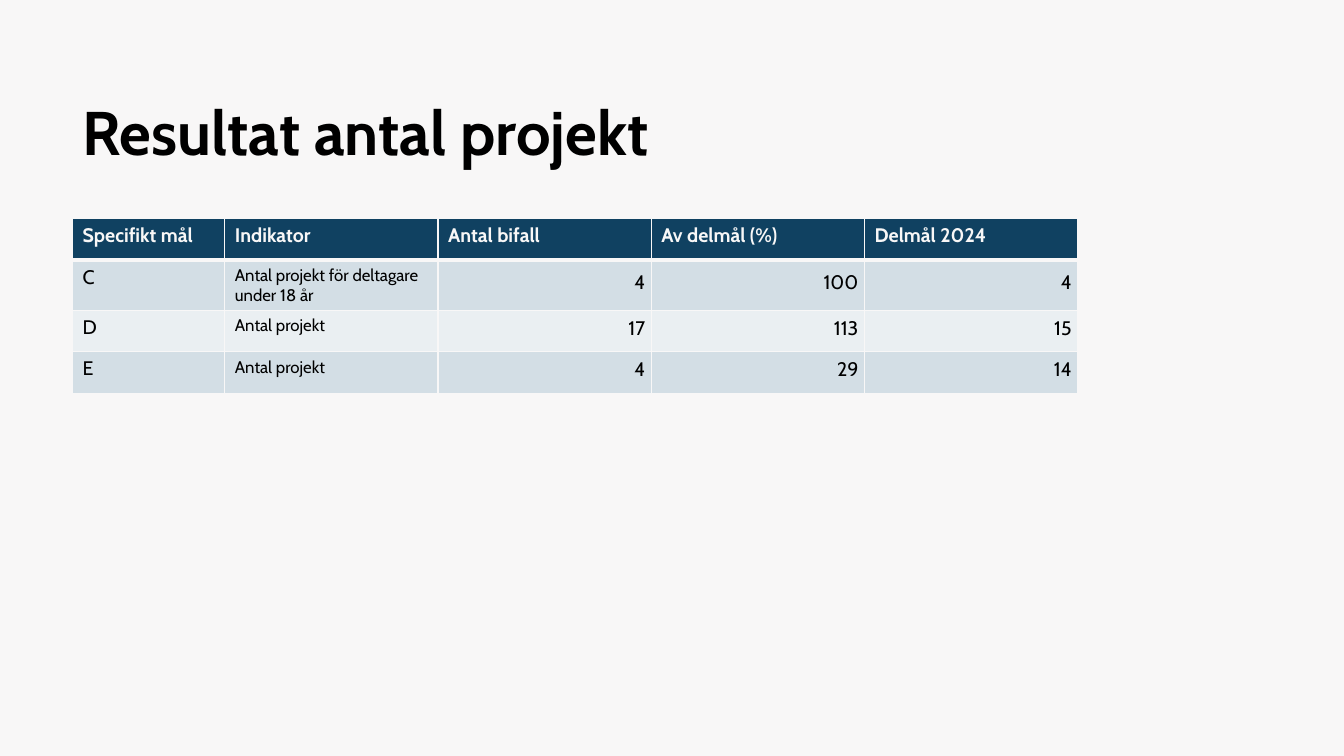
"""Build a slide with a table of project results per specific objective."""
from dataclasses import dataclass

from lxml.etree import SubElement
from pptx import Presentation
from pptx.dml.color import RGBColor as RGB
from pptx.enum.text import MSO_ANCHOR as ANCHOR, PP_ALIGN as ALIGN
from pptx.oxml.ns import qn
from pptx.util import Inches, Pt

TITLE = "Resultat antal projekt"
HEADER = ["Specifikt mål", "Indikator", "Antal bifall", "Av delmål (%)", "Delmål 2024"]
RESULTS = [
    ("C", "Antal projekt för deltagare under 18 år", 4, 100, 4),
    ("D", "Antal projekt", 17, 113, 15),
    ("E", "Antal projekt", 4, 29, 14),
]
LEFT, WIDTH = 0.72, 9.97
TITLE_TOP, TITLE_HEIGHT = 0.62, 1.45
TABLE_TOP, ROW_HEIGHT = 2.17, 0.41
FIRST_COL = 1.51
OTHER_COL = (WIDTH - FIRST_COL) / (len(HEADER) - 1)


@dataclass(frozen=True)
class Theme:
    font: str = "Cabin"
    paper: str = "F8F7F7"
    ink: str = "000000"
    header: str = "104161"
    bands: tuple = ("D3DEE5", "EAEFF2")
    title_size: int = 44
    body_size: int = 14
    small_size: int = 12
    thin: int = 1
    thick: int = 3


THEME = Theme()


def style(p, size, color, bold=False):
    for r in p.runs:
        r.font.name, r.font.size, r.font.bold = THEME.font, Pt(size), bold
        r.font.color.rgb = RGB.from_string(color)


def add_borders(cell, top, bottom):
    tc_pr = cell._tc.get_or_add_tcPr()
    widths = {"lnL": THEME.thin, "lnR": THEME.thin, "lnT": top, "lnB": bottom}
    for side, width in widths.items():
        line = SubElement(tc_pr, qn(f"a:{side}"), w=str(Pt(width)))
        fill = SubElement(line, qn("a:solidFill"))
        SubElement(fill, qn("a:srgbClr"), val=THEME.paper)


def fill_cell(cell, row, col, value):
    add_borders(cell, THEME.thick if row == 1 else THEME.thin,
                THEME.thick if row == 0 else THEME.thin)
    cell.fill.solid()
    band = THEME.bands[(row - 1) % len(THEME.bands)]
    cell.fill.fore_color.rgb = RGB.from_string(band if row else THEME.header)
    cell.text_frame.text = str(value)
    p = cell.text_frame.paragraphs[0]
    if row == 0:
        style(p, THEME.body_size, THEME.paper, bold=True)
        return
    style(p, THEME.small_size if col == 1 else THEME.body_size, THEME.ink)
    if isinstance(value, int):
        cell.vertical_anchor = ANCHOR.MIDDLE
        cell.margin_left = cell.margin_right = Inches(0.06)
        cell.margin_top = cell.margin_bottom = 0
        p.alignment, p.line_spacing, p.space_after = ALIGN.RIGHT, Pt(13), Pt(2)


def add_title(s):
    sp = s.shapes.add_textbox(Inches(LEFT), Inches(TITLE_TOP), Inches(WIDTH), Inches(TITLE_HEIGHT))
    tf = sp.text_frame
    tf.word_wrap, tf.vertical_anchor = True, ANCHOR.MIDDLE
    tf.text = TITLE
    tf.paragraphs[0].line_spacing = 0.9
    style(tf.paragraphs[0], THEME.title_size, THEME.ink, bold=True)


def add_results(s):
    rows = [HEADER, *RESULTS]
    table = s.shapes.add_table(len(rows), len(HEADER), Inches(LEFT), Inches(TABLE_TOP),
                               Inches(WIDTH), Inches(ROW_HEIGHT * len(rows))).table
    for col, column in enumerate(table.columns):
        column.width = Inches(OTHER_COL if col else FIRST_COL)
    for row, values in enumerate(rows):
        table.rows[row].height = Inches(ROW_HEIGHT)
        for col, value in enumerate(values):
            fill_cell(table.cell(row, col), row, col, value)


def main():
    prs = Presentation()
    prs.slide_width, prs.slide_height = Inches(13.33), Inches(7.5)
    s = prs.slides.add_slide(prs.slide_layouts[6])
    s.background.fill.solid()
    s.background.fill.fore_color.rgb = RGB.from_string(THEME.paper)
    add_title(s)
    add_results(s)
    prs.save("out.pptx")


if __name__ == "__main__":
    main()
